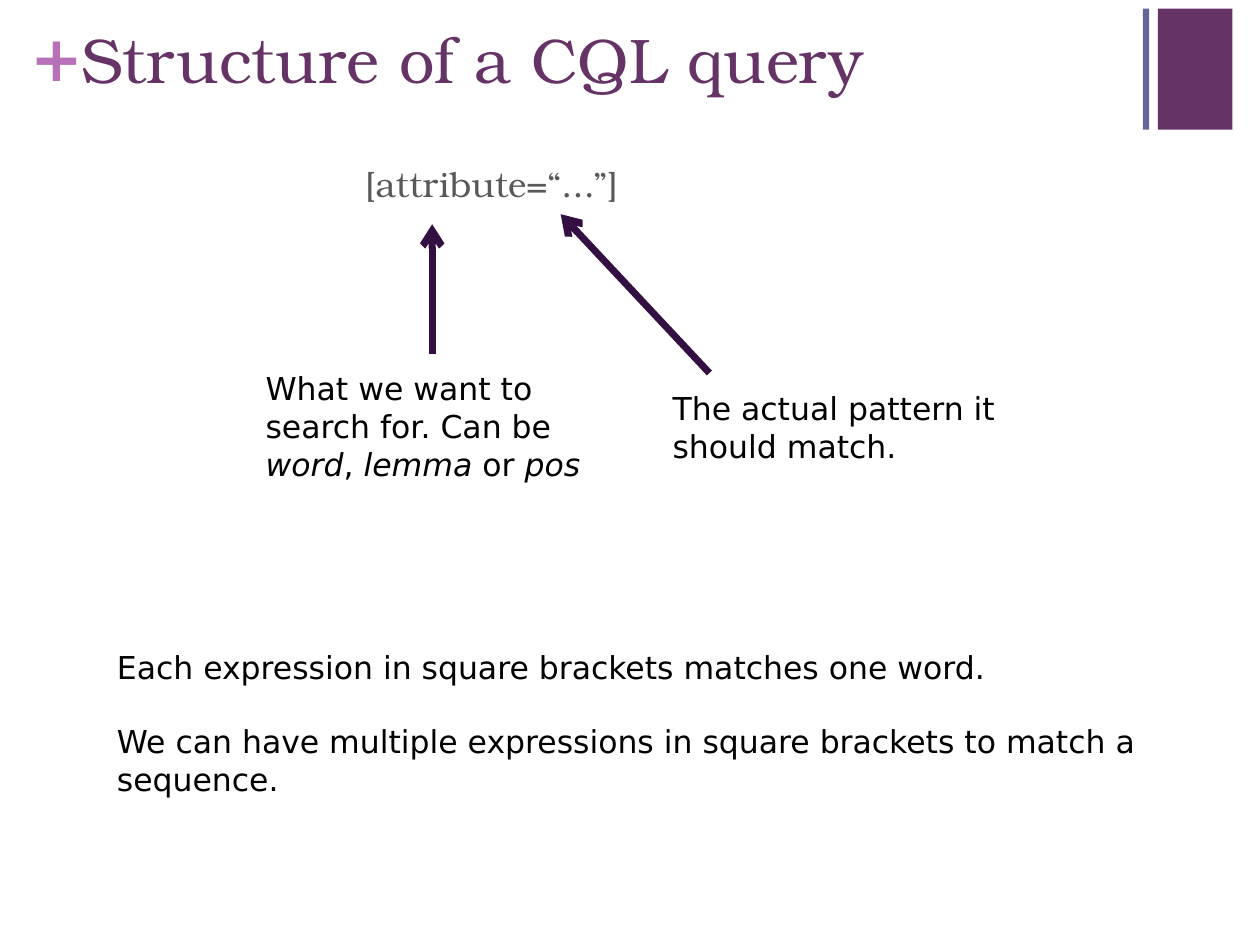
from typing import NamedTuple

from lxml.etree import SubElement
from pptx import Presentation
from pptx.dml.color import RGBColor
from pptx.enum.shapes import MSO_CONNECTOR, MSO_SHAPE
from pptx.enum.text import MSO_ANCHOR, PP_ALIGN
from pptx.oxml.ns import qn
from pptx.util import Inches, Pt

COLORS = {
    "plum": "663366",
    "slate": "666699",
    "orchid": "B870B8",
    "grey": "595959",
    "black": "000000",
    "arrow": "330F42",
}
SANS, SERIF = "DejaVu Sans", "TeX Gyre Bonum"
WIDTH, HEIGHT = Inches(10), Inches(7.5)


class Box(NamedTuple):
    """Left, top, width and height in percent of the slide."""
    left: float
    top: float
    width: float
    height: float


class Bar(NamedTuple):
    box: Box
    color: str


class Note(NamedTuple):
    box: Box
    paragraphs: list[str]


class Arrow(NamedTuple):
    """Start and end points in percent of the slide."""
    start: tuple[float, float]
    end: tuple[float, float]


BARS = [
    Bar(Box(91.9, 0.93, 5.9, 12.8), "plum"),
    Bar(Box(90.7, 0.93, 0.5, 12.8), "slate"),
]
ARROWS = [
    Arrow((34.3, 37.47), (34.3, 23.73)),
    Arrow((56.3, 39.47), (44.5, 22.67)),
]
# Words between asterisks are italic.
NOTES = [
    Note(Box(20.1, 38.4, 30.7, 13.47),
         ["What we want to search for. Can be *word*, *lemma* or *pos*"]),
    Note(Box(52.4, 40.53, 30.7, 9.47), ["The actual pattern it should match."]),
    Note(Box(8.3, 67.87, 86.6, 17.47),
         ["Each expression in square brackets matches one word.",
          "We can have multiple expressions in square brackets to match a sequence."]),
]


def x(share: float) -> int:
    return round(WIDTH * share / 100)


def y(share: float) -> int:
    return round(HEIGHT * share / 100)


def emu(box: Box) -> tuple[int, int, int, int]:
    return x(box.left), y(box.top), x(box.width), y(box.height)


def rgb(name: str) -> RGBColor:
    return RGBColor.from_string(COLORS[name])


def write(tf, paragraphs: list[str], *, size: float = 18, font: str = SANS,
          color: str = "black", bold: bool = False, gap: float = 0) -> None:
    """Fill a text frame; gap is the space between paragraphs in points."""
    tf.word_wrap = True
    tf.vertical_anchor = MSO_ANCHOR.TOP
    for i, text in enumerate(paragraphs):
        p = tf.add_paragraph() if i else tf.paragraphs[0]
        p.alignment = PP_ALIGN.LEFT
        p.space_before = Pt(gap if i else 0)
        for j, part in enumerate(text.split("*")):
            if not part:
                continue
            r = p.add_run()
            r.text = part
            r.font.size, r.font.name = Pt(size), font
            r.font.bold, r.font.italic = bold, j % 2 == 1
            r.font.color.rgb = rgb(color)


def add_text(s, box: Box, paragraphs: list[str], **style):
    tf = s.shapes.add_textbox(*emu(box)).text_frame
    write(tf, paragraphs, **style)
    return tf


def add_bar(s, bar: Bar) -> None:
    sp = s.shapes.add_shape(MSO_SHAPE.RECTANGLE, *emu(bar.box))
    sp.shadow.inherit = False
    sp.fill.solid()
    sp.fill.fore_color.rgb = rgb(bar.color)
    sp.line.fill.background()


def add_arrow(s, arrow: Arrow) -> None:
    (x1, y1), (x2, y2) = arrow
    cxn = s.shapes.add_connector(MSO_CONNECTOR.STRAIGHT, x(x1), y(y1), x(x2), y(y2))
    cxn.line.color.rgb = rgb("arrow")
    cxn.line.width = Pt(4)
    SubElement(cxn.line._get_or_add_ln(), qn("a:tailEnd"), type="arrow")
    SubElement(cxn._element.spPr, qn("a:effectLst"))


def main() -> None:
    prs = Presentation()
    prs.slide_width, prs.slide_height = WIDTH, HEIGHT
    s = prs.slides.add_slide(prs.slide_layouts[5])

    title = s.shapes.title
    title.left, title.top, title.width, title.height = emu(Box(5.5, 1.47, 85.2, 12.27))
    write(title.text_frame, ["Structure of a CQL query"],
          size=36, font=SERIF, color="plum")

    for bar in BARS:
        add_bar(s, bar)
    plus = add_text(s, Box(2.4, 2, 2.9, 8.13), ["+"], size=36, color="orchid", bold=True)
    plus.margin_left = plus.margin_top = plus.margin_right = plus.margin_bottom = 0

    add_text(s, Box(28, 16.53, 30, 6), ["[attribute=“...”]"],
             size=20, font=SERIF, color="grey")
    for arrow in ARROWS:
        add_arrow(s, arrow)
    for note in NOTES:
        add_text(s, note.box, note.paragraphs, gap=21)

    prs.save("out.pptx")


if __name__ == "__main__":
    main()
